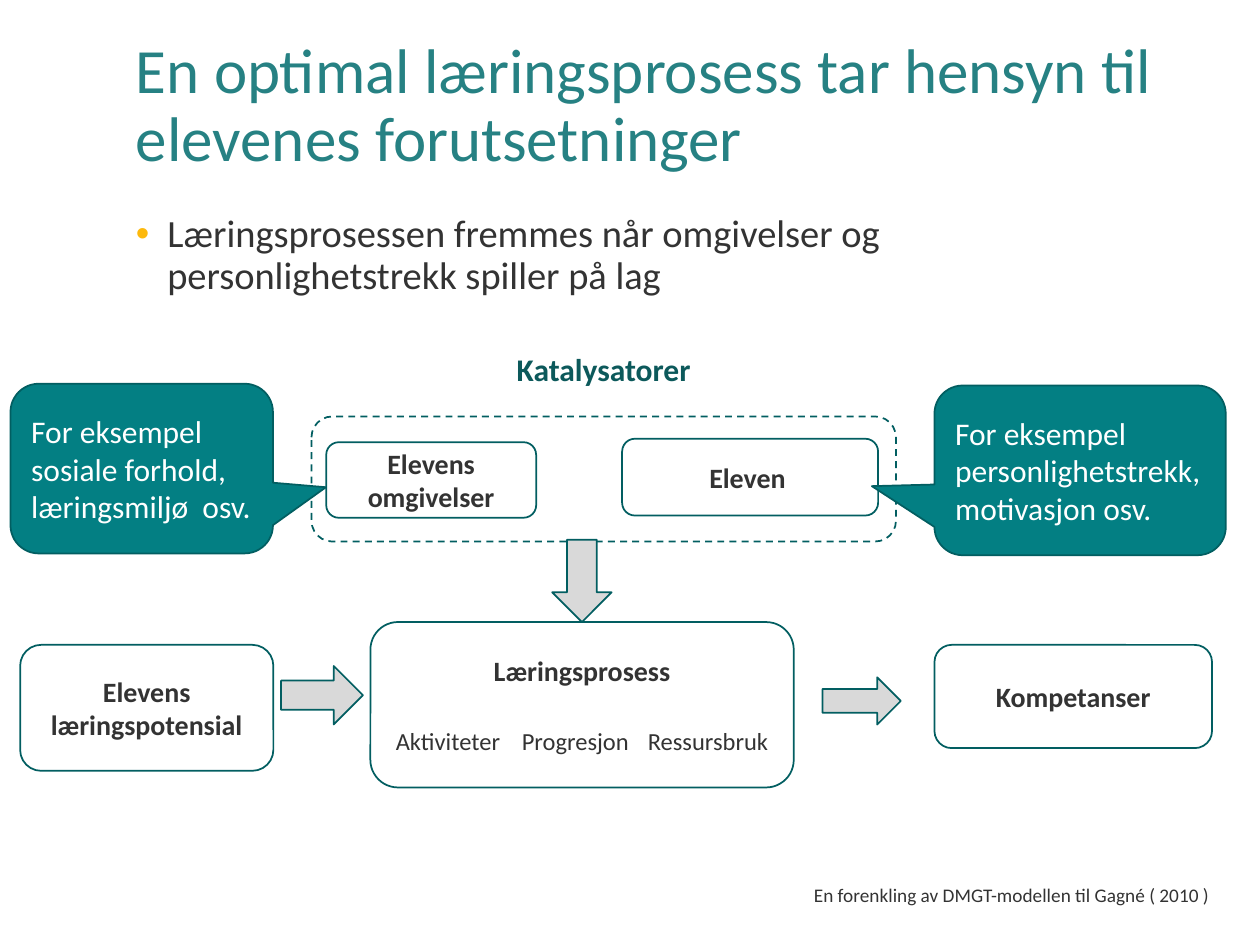
from lxml.etree import SubElement
from pptx import Presentation
from pptx.dml.color import RGBColor
from pptx.enum.dml import MSO_LINE
from pptx.enum.shapes import MSO_SHAPE
from pptx.enum.text import MSO_ANCHOR, MSO_AUTO_SIZE, PP_ALIGN
from pptx.oxml.ns import qn
from pptx.util import Pt

FONT = "Calibri"
WHITE = RGBColor(0xFF, 0xFF, 0xFF)
INK = RGBColor(0x33, 0x33, 0x33)
TITLE = RGBColor(0x26, 0x81, 0x83)
LABEL = RGBColor(0x0C, 0x59, 0x5B)
EDGE = RGBColor(0x02, 0x5E, 0x61)
TEAL = RGBColor(0x03, 0x7F, 0x83)
GREY = RGBColor(0xD9, 0xD9, 0xD9)
GOLD = "FDB90C"


def write(frame, text, size=16, color=INK, bold=False, align=PP_ALIGN.LEFT,
          anchor=MSO_ANCHOR.TOP, gap=0, lead=None, bullet=False, more=False):
    """Set one paragraph of a text frame; more adds it after the last one."""
    frame.word_wrap = True
    frame.vertical_anchor = anchor
    para = frame.add_paragraph() if more else frame.paragraphs[0]
    para.text = text
    para.alignment = align
    if lead:
        para.line_spacing = lead
    if gap:
        para.space_before = Pt(gap)
    if bullet:
        props = para._p.get_or_add_pPr()
        props.set("marL", str(Pt(18)))
        props.set("indent", str(-Pt(18)))
        tint = SubElement(props, qn("a:buClr"))
        SubElement(tint, qn("a:srgbClr")).set("val", GOLD)
        SubElement(props, qn("a:buFont")).set("typeface", "Arial")
        SubElement(props, qn("a:buChar")).set("char", "•")
    font = para.font
    font.name, font.size, font.bold = FONT, Pt(size), bold
    font.color.rgb = color


def label(slide, box, text, **style):
    """Plain text box."""
    area = slide.shapes.add_textbox(*map(Pt, box))
    write(area.text_frame, text, **style)


def draw(slide, kind, box, fill=None):
    """Preset shape with the common outline."""
    shape = slide.shapes.add_shape(kind, *map(Pt, box))
    shape.shadow.inherit = False
    if fill is None:
        shape.fill.background()
    else:
        shape.fill.solid()
        shape.fill.fore_color.rgb = fill
    shape.line.color.rgb = EDGE
    shape.line.width = Pt(1)
    return shape


def card(slide, box, text):
    """White rounded box with a bold centred heading."""
    shape = draw(slide, MSO_SHAPE.ROUNDED_RECTANGLE, box, WHITE)
    write(shape.text_frame, text, bold=True, align=PP_ALIGN.CENTER,
          anchor=MSO_ANCHOR.MIDDLE)
    return shape.text_frame


def arrow(slide, box, turn=0):
    shape = draw(slide, MSO_SHAPE.RIGHT_ARROW, box, GREY)
    shape.rotation = turn


def callout(slide, box, tip, text):
    """Teal speech bubble; tip is the offset of its point from the centre."""
    shape = draw(slide, MSO_SHAPE.ROUNDED_RECTANGULAR_CALLOUT, box, TEAL)
    shape.adjustments[0], shape.adjustments[1] = tip
    write(shape.text_frame, text, size=18, color=WHITE,
          anchor=MSO_ANCHOR.MIDDLE)


def head(slide, text):
    title = slide.shapes.title
    title.left, title.top, title.width, title.height = map(
        Pt, (70.5, 28.8, 597, 104.4))
    frame = title.text_frame
    frame.auto_size = MSO_AUTO_SIZE.NONE
    frame.margin_bottom = Pt(43)
    write(frame, text, size=36, color=TITLE, lead=0.9,
          anchor=MSO_ANCHOR.MIDDLE)


def main():
    deck = Presentation()
    deck.slide_width, deck.slide_height = Pt(720), Pt(540)
    slide = deck.slides.add_slide(deck.slide_layouts[5])

    # Title, main point and source note
    head(slide, "En optimal læringsprosess tar hensyn til "
                "elevenes forutsetninger")
    label(slide, (70.5, 119, 597, 60),
          "Læringsprosessen fremmes når omgivelser og "
          "personlighetstrekk spiller på lag",
          size=22, lead=0.9, bullet=True)
    label(slide, (458, 501, 252, 21),
          "En forenkling av DMGT-modellen til Gagné ( 2010 )", size=11)

    # Bottom row: potential, process, competences
    card(slide, (11.5, 368.5, 144.7, 72), "Elevens læringspotensial")
    work = card(slide, (211.7, 355.5, 241.9, 94.5), "Læringsprosess")
    write(work, "Aktiviteter\tProgresjon\tRessursbruk", size=14, gap=22,
          align=PP_ALIGN.CENTER, anchor=MSO_ANCHOR.MIDDLE, more=True)
    card(slide, (534, 368.5, 158.6, 59), "Kompetanser")
    arrow(slide, (160.6, 380.6, 46.8, 33.4))
    arrow(slide, (470, 387, 44.8, 27))

    # Catalysts in their dashed frame
    frame = draw(slide, MSO_SHAPE.ROUNDED_RECTANGLE, (178, 238, 334, 71.5))
    frame.line.dash_style = MSO_LINE.DASH
    label(slide, (178, 196.5, 334, 29), "Katalysatorer", size=18,
          color=LABEL, bold=True, align=PP_ALIGN.CENTER)
    card(slide, (186.4, 252.7, 120, 43.2), "Elevens omgivelser")
    pupil = card(slide, (355.5, 250.7, 146.3, 43.9), "Eleven")
    pupil.margin_left, pupil.margin_right = Pt(3), Pt(6)

    # Examples and the arrow down to the process
    callout(slide, (534, 220.3, 166.5, 97), (-0.715, 0.093),
            "For eksempel personlighetstrekk, motivasjon osv.")
    callout(slide, (6, 219.3, 150, 97), (0.702, 0.11),
            "For eksempel sosiale forhold, læringsmiljø  osv.")
    arrow(slide, (309, 315, 47, 34), turn=90)

    deck.save("out.pptx")


if __name__ == "__main__":
    main()
